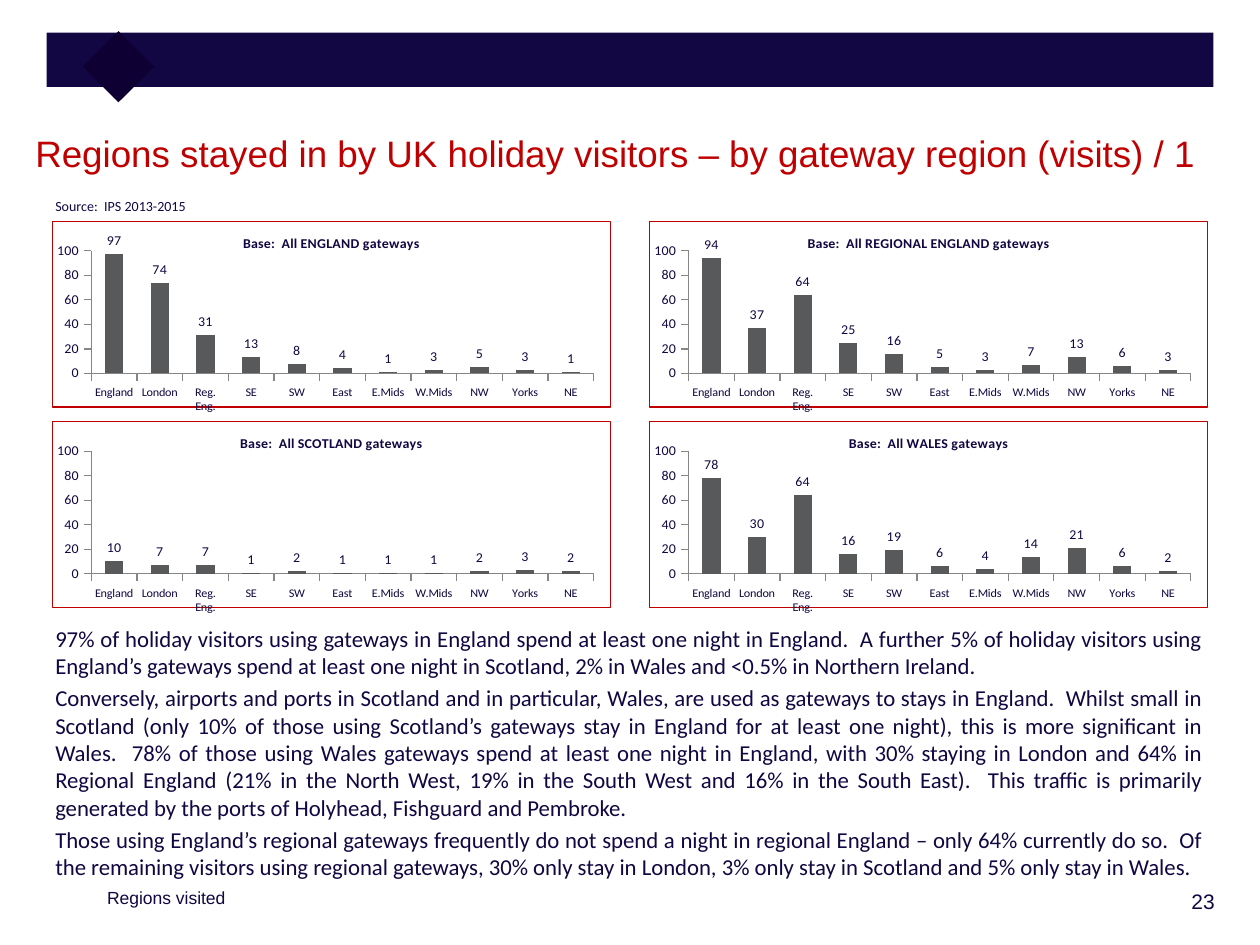
from lxml.etree import SubElement as Sub
from pptx import Presentation
from pptx.chart.data import CategoryChartData as Data
from pptx.dml.color import RGBColor as RGB
from pptx.enum.chart import XL_CHART_TYPE as Kind, XL_LABEL_POSITION as Spot, XL_TICK_MARK as Tick
from pptx.enum.shapes import MSO_SHAPE as Shape
from pptx.enum.text import MSO_ANCHOR as Anchor, MSO_AUTO_SIZE as Fit, PP_ALIGN as Align
from pptx.oxml import parse_xml
from pptx.oxml.ns import nsdecls, qn
from pptx.util import Inches, Pt

COLORS = {"navy": "120742", "dark": "0E0033", "red": "C00000", "bar": "58595B", "axis": "868686"}
REGIONS = ["England", "London", "Reg. Eng.", "SE", "SW", "East",
           "E.Mids", "W.Mids", "NW", "Yorks", "NE"]
GATES = [
    ("ENGLAND", [97, 74, 31, 13, 8, 4, 1, 3, 5, 3, 1]),
    ("REGIONAL ENGLAND", [94, 37, 64, 25, 16, 5, 3, 7, 13, 6, 3]),
    ("SCOTLAND", [10, 7, 7, 1, 2, 1, 1, 1, 2, 3, 2]),
    ("WALES", [78, 30, 64, 16, 19, 6, 4, 14, 21, 6, 2]),
]
NOTES = [
    "97% of holiday visitors using gateways in England spend at least one night in England.  "
    "A further 5% of holiday visitors using England’s gateways spend at least one night in "
    "Scotland, 2% in Wales and <0.5% in Northern Ireland.",
    "Conversely, airports and ports in Scotland and in particular, Wales, are used as gateways "
    "to stays in England.  Whilst small in Scotland (only 10% of those using Scotland’s gateways "
    "stay in England for at least one night), this is more significant in Wales.  78% of those "
    "using Wales gateways spend at least one night in England, with 30% staying in London and "
    "64% in Regional England (21% in the North West, 19% in the South West and 16% in the South "
    "East).  This traffic is primarily generated by the ports of Holyhead, Fishguard and Pembroke.",
    "Those using England’s regional gateways frequently do not spend a night in regional England "
    "– only 64% currently do so.  Of the remaining visitors using regional gateways, 30% only "
    "stay in London, 3% only stay in Scotland and 5% only stay in Wales.",
]


class Page:
    """Holds the style and the current slide."""

    def __init__(self, deck):
        self.slide = deck.slides.add_slide(deck.slide_layouts[1])
        self.shapes = self.slide.shapes

    def color(self, name):
        return RGB.from_string(COLORS[name])

    def style(self, font, size, color="navy", face="Calibri", bold=False):
        font.name, font.size, font.bold = face, Pt(size), bold
        font.color.rgb = self.color(color)

    def block(self, box, color, turn=0):
        item = self.shapes.add_shape(Shape.RECTANGLE, *map(Inches, box))
        item.shadow.inherit = False
        item.rotation = turn
        item.fill.solid()
        item.fill.fore_color.rgb = self.color(color)
        item.line.fill.background()

    def fill(self, item, box, lines, size, color="navy", face="Calibri", align=Align.LEFT, top=0.05):
        item.left, item.top, item.width, item.height = map(Inches, box)
        frame = item.text_frame
        frame.word_wrap, frame.auto_size = True, Fit.NONE
        frame.vertical_anchor, frame.margin_top = Anchor.TOP, Inches(top)
        frame.text = "\n".join(lines)
        for i, para in enumerate(frame.paragraphs):
            if item.is_placeholder:
                props = para._p.get_or_add_pPr()
                props.set("marL", "0")
                props.set("indent", "0")
                Sub(props, qn("a:buNone"))
            para.alignment = align
            para.space_before = Pt(size * 0.2 if i else 0)
            self.style(para.font, size, color, face)

    def text(self, box, lines, size, **look):
        self.fill(self.shapes.add_textbox(*map(Inches, box)), box, lines, size, **look)

    def axis(self, axis, size):
        axis.has_major_gridlines = False
        axis.major_tick_mark, axis.minor_tick_mark = Tick.OUTSIDE, Tick.NONE
        axis.format.line.color.rgb = self.color("axis")
        axis.format.line.width = Pt(0.75)
        self.style(axis.tick_labels.font, size)

    def chart(self, box, title, vals):
        data = Data(number_format="0")
        data.categories = REGIONS
        data.add_series("Series 1", vals)
        chart = self.shapes.add_chart(Kind.COLUMN_CLUSTERED, *map(Inches, box), data).chart
        self.style(chart.font, 12)
        chart.has_legend = False
        chart.has_title = True
        head = chart.chart_title.text_frame
        head.text = title
        self.style(head.paragraphs[0].font, 8, bold=True)
        self.axis(chart.category_axis, 7)
        scale = chart.value_axis
        self.axis(scale, 8)
        scale.minimum_scale, scale.maximum_scale, scale.major_unit = 0, 100, 20
        plot = chart.plots[0]
        plot.gap_width, plot.vary_by_categories = 150, False
        paint = plot.series[0].format.fill
        paint.solid()
        paint.fore_color.rgb = self.color("bar")
        plot.has_data_labels = True
        labels = plot.data_labels
        labels.show_value, labels.position = True, Spot.OUTSIDE_END
        labels.number_format, labels.number_format_is_linked = "0", False
        self.style(labels.font, 8)
        self.frame(chart)

    def frame(self, chart):
        root = chart._chartSpace.find(qn("c:chart"))
        root.addnext(parse_xml(
            f'<c:spPr {nsdecls("c", "a")}><a:noFill/><a:ln w="{Pt(0.75)}"><a:solidFill>'
            f'<a:srgbClr val="{COLORS["red"]}"/></a:solidFill></a:ln></c:spPr>'))
        area = root.find(qn("c:plotArea"))
        for old in area.findall(qn("c:layout")):
            area.remove(old)
        rules = [("layoutTarget", "inner"), ("xMode", "edge"), ("yMode", "edge"),
                 ("x", 0.07), ("y", 0.16), ("w", 0.9), ("h", 0.66)]
        body = "".join(f'<c:{key} val="{val}"/>' for key, val in rules)
        area.insert(0, parse_xml(
            f'<c:layout {nsdecls("c")}><c:manualLayout>{body}</c:manualLayout></c:layout>'))


def main():
    deck = Presentation()
    deck.slide_width, deck.slide_height = Inches(10), Inches(7.5)
    page = Page(deck)
    page.block((0.37, 0.26, 9.26, 0.43), "navy")
    page.block((0.74, 0.33, 0.4, 0.4), "dark", 45)
    page.fill(page.shapes.title, (0.18, 0.95, 9.64, 0.61),
              ["Regions stayed in by UK holiday visitors – by gateway region (visits) / 1"],
              21, color="red", face="Arial", top=0.09)
    page.text((0.34, 4.91, 9.29, 2.03), NOTES, 13, align=Align.JUSTIFY)
    page.text((0.34, 1.52, 2.02, 0.18), ["Source:  IPS 2013-2015"], 8)
    for i, (gate, vals) in enumerate(GATES):
        row, col = divmod(i, 2)
        page.chart((0.41 + 4.74 * col, 1.75 + 1.59 * row, 4.44, 1.53),
                   f"Base:  All {gate} gateways", vals)
    page.fill(page.slide.placeholders[1], (0.75, 6.99, 2.67, 0.3), ["Regions visited"],
              10, face="Arial")
    page.text((8.53, 7, 1.21, 0.36), ["23"], 12, face="Arial", align=Align.RIGHT)
    deck.save("out.pptx")


if __name__ == "__main__":
    main()
